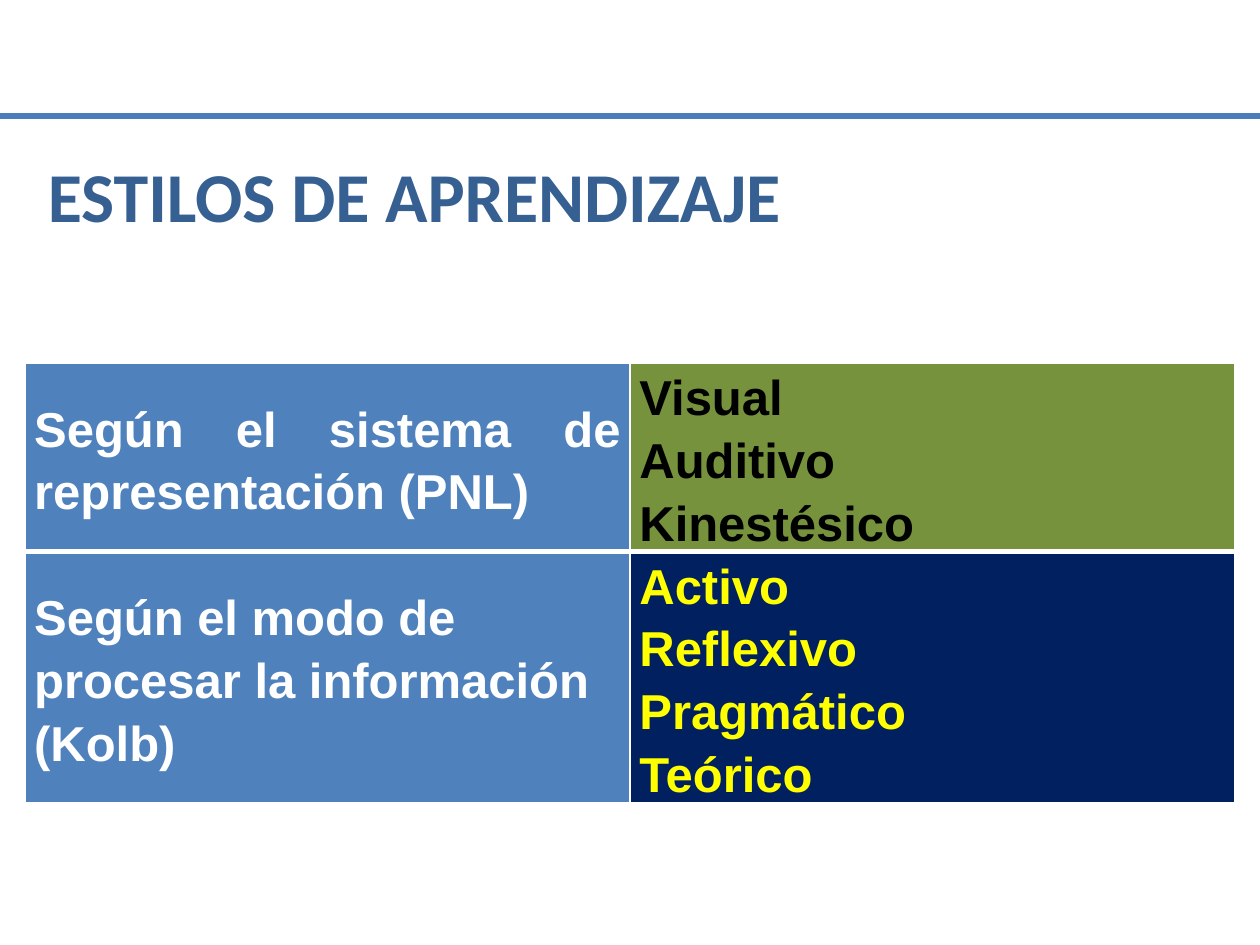
from lxml.etree import SubElement
from pptx import Presentation
from pptx.dml.color import RGBColor
from pptx.enum.shapes import MSO_CONNECTOR as Connector
from pptx.enum.text import MSO_ANCHOR as Anchor, PP_ALIGN as Align
from pptx.oxml.ns import qn
from pptx.util import Cm, Pt

COLORS = {
    "rule": "4A7DBA",
    "title": "366092",
    "blue": "4F81BD",
    "green": "76923C",
    "navy": "002060",
    "white": "FFFFFF",
    "black": "000000",
    "yellow": "FFFF00",
}
ROW_HEIGHTS = [3.79, 5.05]
STYLES = [
    (["Según el sistema de representación (PNL)"], "blue", "white", Align.JUSTIFY, Anchor.MIDDLE),
    (["Visual ", "Auditivo ", "Kinestésico"], "green", "black", Align.JUSTIFY, Anchor.TOP),
    (["Según el modo de procesar la información (Kolb)"], "blue", "white", Align.LEFT, Anchor.MIDDLE),
    (["Activo ", "Reflexivo ", "Pragmático ", "Teórico"], "navy", "yellow", Align.JUSTIFY, Anchor.TOP),
]


def color(name):
    return RGBColor.from_string(COLORS[name])


def set_font(paragraph, name, size, color_name):
    font = paragraph.font
    font.name = name
    font.size = Pt(size)
    font.bold = True
    font.color.rgb = color(color_name)


def add_rule(slide, width):
    rule = slide.shapes.add_connector(Connector.STRAIGHT, 0, Cm(2.34), width, Cm(2.34))
    rule.line.color.rgb = color("rule")
    rule.line.width = Pt(3)
    SubElement(rule._element.spPr, qn("a:effectLst"))


def fill_title(slide, text):
    title = slide.shapes.title
    title.left, title.top, title.width, title.height = Cm(0.71), Cm(2.34), Cm(22.86), Cm(3.18)
    title.text_frame.vertical_anchor = Anchor.MIDDLE
    title.text_frame.text = text
    paragraph = title.text_frame.paragraphs[0]
    paragraph.alignment = Align.LEFT
    set_font(paragraph, "Calibri", 40, "title")


def set_borders(cell, widths):
    properties = cell._tc.get_or_add_tcPr()
    for index, (side, width) in enumerate(widths.items()):
        border = properties.makeelement(qn(f"a:ln{side}"), {"w": str(Pt(width))})
        fill = SubElement(border, qn("a:solidFill"))
        SubElement(fill, qn("a:srgbClr"), val=COLORS["white"])
        properties.insert(index, border)


def fill_cell(cell, lines, fill, text_color, alignment, anchor):
    cell.fill.solid()
    cell.fill.fore_color.rgb = color(fill)
    cell.vertical_anchor = anchor
    cell.margin_left = cell.margin_right = Cm(0.19)
    cell.margin_top = cell.margin_bottom = 0
    cell.text = "\n".join(lines)
    for paragraph in cell.text_frame.paragraphs:
        paragraph.alignment = alignment
        paragraph.line_spacing = 1.15
        set_font(paragraph, "Arial", 28, text_color)


def add_styles_table(slide):
    table = slide.shapes.add_table(
        2, 2, Cm(0.5), Cm(7.32), Cm(24.4), Cm(sum(ROW_HEIGHTS))
    ).table
    for row, height in zip(table.rows, ROW_HEIGHTS):
        row.height = Cm(height)
    for index, style in enumerate(STYLES):
        row, column = divmod(index, 2)
        cell = table.cell(row, column)
        fill_cell(cell, *style)
        top, bottom = (1, 3) if row == 0 else (3, 1)
        set_borders(cell, {"L": 1, "R": 1, "T": top, "B": bottom})


def main():
    presentation = Presentation()
    presentation.slide_width = Cm(25.4)
    presentation.slide_height = Cm(19.05)
    slide = presentation.slides.add_slide(presentation.slide_layouts[5])
    add_rule(slide, presentation.slide_width)
    add_styles_table(slide)
    fill_title(slide, "ESTILOS DE APRENDIZAJE")
    presentation.save("out.pptx")


if __name__ == "__main__":
    main()
